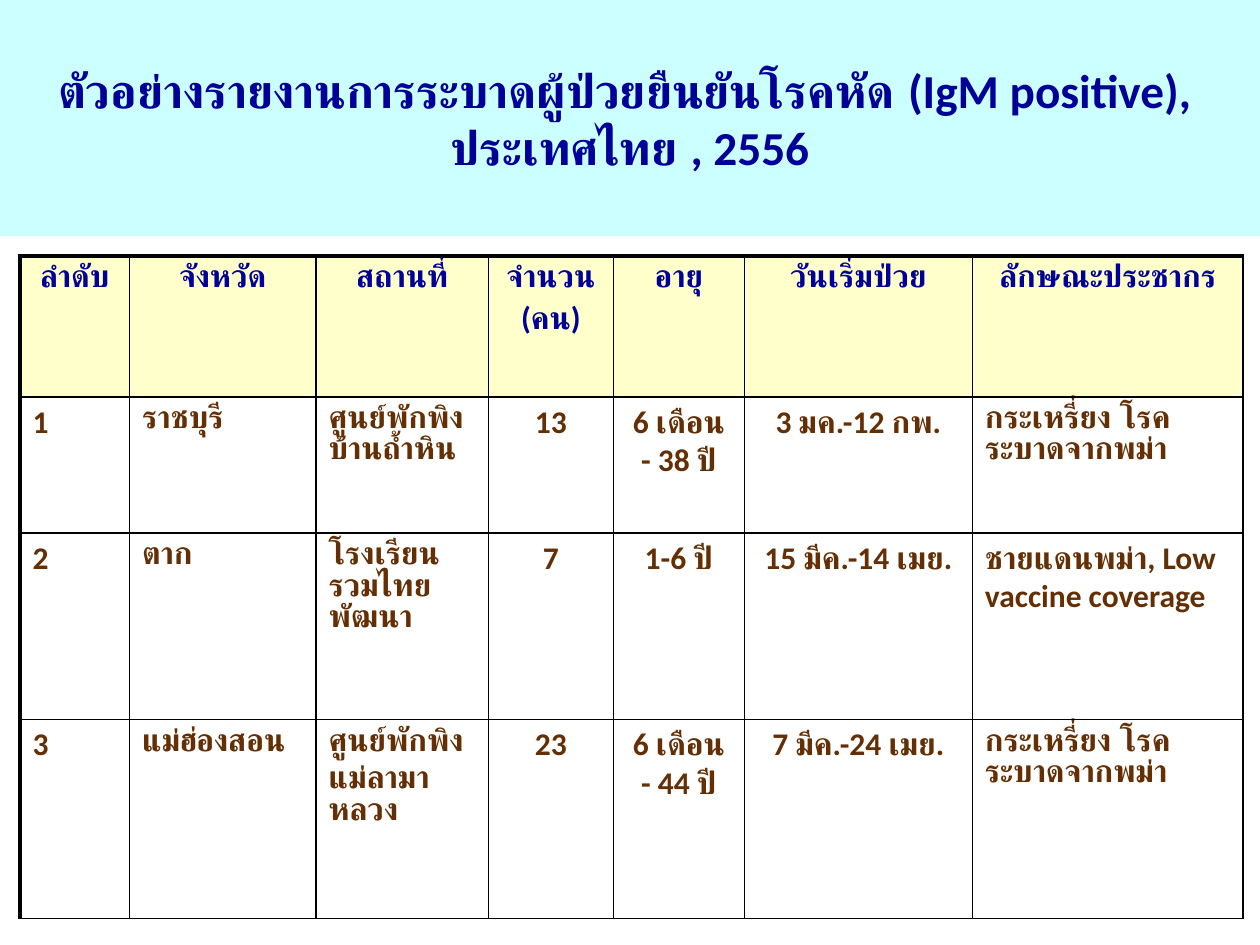
from lxml import etree
from pptx import Presentation
from pptx.dml.color import RGBColor
from pptx.enum.text import MSO_ANCHOR, MSO_AUTO_SIZE, PP_ALIGN
from pptx.oxml.ns import qn
from pptx.util import Pt

CENTER, LEFT = PP_ALIGN.CENTER, PP_ALIGN.LEFT
MIDDLE, TOP = MSO_ANCHOR.MIDDLE, MSO_ANCHOR.TOP
NO_AUTOFIT = MSO_AUTO_SIZE.NONE

NAVY = RGBColor(0x00, 0x00, 0x99)
BROWN = RGBColor(0x64, 0x2F, 0x04)
PALE_CYAN = RGBColor(0xCC, 0xFF, 0xFF)
PALE_YELLOW = RGBColor(0xFF, 0xFF, 0xCC)
BLACK = RGBColor(0x00, 0x00, 0x00)

TITLE_LINES = [
    "ตัวอย่างรายงานการระบาดผู้ป่วยยืนยันโรคหัด (IgM positive), ",
    "ประเทศไทย , 2556",
]
# Each newline inside a cell starts a new paragraph.
ROWS = [
    ["ลำดับ", "จังหวัด", "สถานที่", "จำนวน\n(คน)", "อายุ", "วันเริ่มป่วย", "ลักษณะประชากร"],
    ["1", "ราชบุรี", "ศูนย์พักพิงบ้านถ้ำหิน", "13", "6 เดือน - 38 ปี",
     "3 มค.-12 กพ.", "กระเหรี่ยง โรคระบาดจากพม่า"],
    ["2", "ตาก", "โรงเรียนรวมไทยพัฒนา", "7", "1-6 ปี",
     "15 มีค.-14 เมย.", "ชายแดนพม่า, Low vaccine coverage"],
    ["3", "แม่ฮ่องสอน", "ศูนย์พักพิง\nแม่ลามาหลวง", "23", "6 เดือน - 44 ปี",
     "7 มีค.-24 เมย.", "กระเหรี่ยง โรคระบาดจากพม่า"],
]
COL_WIDTHS = [62.6, 106.6, 98.6, 71.3, 74.9, 130.3, 154.8]
ROW_HEIGHTS = [80.6, 77.8, 106.6, 113.8]
CENTERED_COLS = (3, 4, 5)
THIN, THICK = 1, 2.25


def add_run(p, text, size, color):
    r = p.add_run()
    r.text = text
    r.font.name = "Calibri"
    r.font.size = Pt(size)
    r.font.bold = True
    r.font.color.rgb = color


def add_border(cell, side, width):
    """Draw one side (L, R, T or B) of a cell; call before setting its fill."""
    ln = etree.SubElement(cell._tc.get_or_add_tcPr(), qn(f"a:ln{side}"), w=str(Pt(width)))
    fill = etree.SubElement(ln, qn("a:solidFill"))
    etree.SubElement(fill, qn("a:srgbClr"), val=str(BLACK))


prs = Presentation()
prs.slide_width, prs.slide_height = Pt(720), Pt(540)
s = prs.slides.add_slide(prs.slide_layouts[5])

# Title band
title = s.shapes.title
title.left, title.top, title.width, title.height = Pt(0), Pt(0), Pt(720), Pt(134.8)
title.fill.solid()
title.fill.fore_color.rgb = PALE_CYAN
tf = title.text_frame
tf.word_wrap = True
tf.auto_size = NO_AUTOFIT
tf.vertical_anchor = MIDDLE
p = tf.paragraphs[0]
p.alignment = CENTER
for i, line in enumerate(TITLE_LINES):
    if i:
        p.add_line_break()
    add_run(p, line, 27, NAVY)

# Outbreak table
table = s.shapes.add_table(
    len(ROWS), len(COL_WIDTHS), Pt(11.4), Pt(146.2),
    Pt(sum(COL_WIDTHS)), Pt(sum(ROW_HEIGHTS)),
).table
table.first_row = False
table.horz_banding = False
for column, width in zip(table.columns, COL_WIDTHS):
    column.width = Pt(width)
for row, height in zip(table.rows, ROW_HEIGHTS):
    row.height = Pt(height)

for i, texts in enumerate(ROWS):
    header = i == 0
    for j, text in enumerate(texts):
        cell = table.cell(i, j)
        add_border(cell, "L", THICK if j == 0 else THIN)
        add_border(cell, "R", THIN)
        add_border(cell, "T", THICK if header else THIN)
        add_border(cell, "B", THIN)
        if header:
            cell.fill.solid()
            cell.fill.fore_color.rgb = PALE_YELLOW
        else:
            cell.fill.background()
        cell.vertical_anchor = TOP
        tf = cell.text_frame
        for k, line in enumerate(text.split("\n")):
            p = tf.add_paragraph() if k else tf.paragraphs[0]
            p.alignment = CENTER if header or j in CENTERED_COLS else LEFT
            p.space_before = Pt(3.6)
            add_run(p, line, 18, NAVY if header else BROWN)

prs.save("out.pptx")
